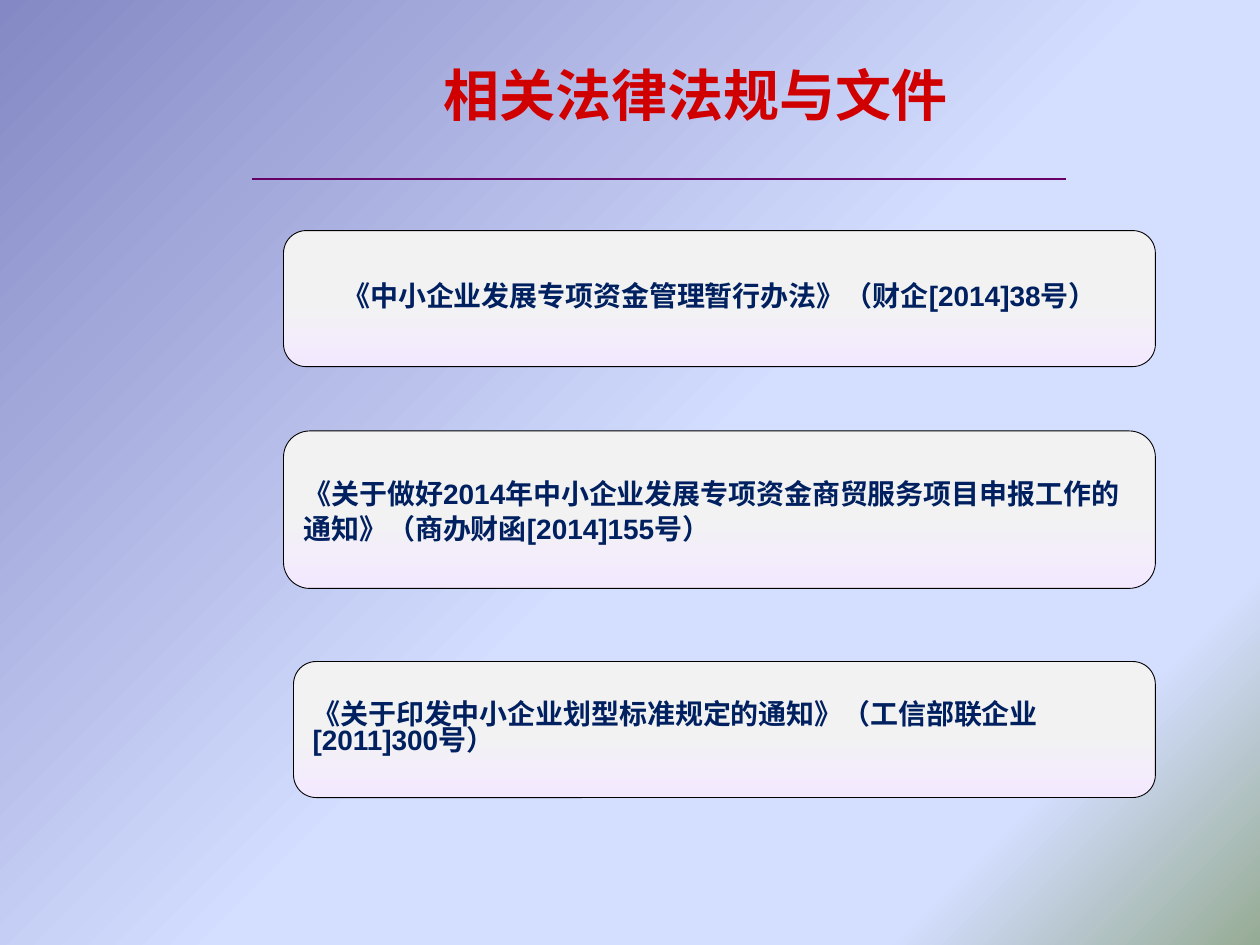
from lxml import etree
from pptx import Presentation
from pptx.dml.color import RGBColor
from pptx.enum import shapes, text
from pptx.oxml.ns import qn
from pptx.util import Inches, Pt

COLORS = {
    "title": "D00000", "body": "002060", "rule": "660066", "outline": "000000",
    "dusk": "8488C4", "sky": "D4DEFF", "sage": "96AB94",
    "grey": "F2F2F2", "lilac": "F3E9FF",
}
BACKGROUND_STOPS = [(0, "dusk"), (53, "sky"), (83, "sky"), (100, "sage")]
BOX_STOPS = [(0, "grey"), (50, "grey"), (100, "lilac")]
BOX_RIGHT = 9.17


def color(name):
    return RGBColor.from_string(COLORS[name])


def set_gradient(fill, element, stops, angle):
    """Give fill, found inside element, any number of stops; angle is clockwise."""
    fill.gradient()
    fill.gradient_angle = 360 - angle
    stop_list = element.find(".//" + qn("a:gsLst"))
    for stop in list(stop_list):
        stop_list.remove(stop)
    for percent, name in stops:
        stop = etree.SubElement(stop_list, qn("a:gs"), pos=str(percent * 1000))
        etree.SubElement(stop, qn("a:srgbClr"), val=COLORS[name])


def write_text(shape, content, *, font, size, color_name,
               align=text.PP_ALIGN.LEFT, line_spacing=None):
    frame = shape.text_frame
    frame.word_wrap = True
    frame.auto_size = text.MSO_AUTO_SIZE.NONE
    frame.vertical_anchor = text.MSO_ANCHOR.MIDDLE
    paragraph = frame.paragraphs[0]
    paragraph.alignment = align
    paragraph.line_spacing = line_spacing
    run = paragraph.add_run()
    run.text = content
    run.font.name = font
    run.font.size = Pt(size)
    run.font.bold = True
    run.font.color.rgb = color(color_name)


def add_title(slide, content):
    title = slide.shapes.title
    title.left, title.top = Inches(3.42), Inches(0.25)
    title.width, title.height = Inches(4.67), Inches(0.99)
    write_text(title, content, font="Calibri", size=32, color_name="title")


def add_rule(slide):
    rule = slide.shapes.add_connector(
        shapes.MSO_CONNECTOR.STRAIGHT,
        Inches(2), Inches(1.42), Inches(8.46), Inches(1.42))
    rule.line.color.rgb = color("rule")
    rule.line.width = Pt(0.75)
    etree.SubElement(rule._element.spPr, qn("a:effectLst"))


def add_document_box(slide, content, left, top, height, **text_format):
    box = slide.shapes.add_shape(
        shapes.MSO_SHAPE.ROUNDED_RECTANGLE, Inches(left), Inches(top),
        Inches(BOX_RIGHT - left), Inches(height))
    box.shadow.inherit = False
    set_gradient(box.fill, box._element, BOX_STOPS, 90)
    box.line.color.rgb = color("outline")
    box.line.width = Pt(0.5)
    write_text(box, content, font="Arial", size=16, color_name="body", **text_format)


def main():
    presentation = Presentation()
    presentation.slide_width, presentation.slide_height = Inches(10), Inches(7.5)
    slide = presentation.slides.add_slide(presentation.slide_layouts[5])
    set_gradient(slide.background.fill, slide._element, BACKGROUND_STOPS, 45)

    add_title(slide, "相关法律法规与文件")
    add_document_box(
        slide, "《关于印发中小企业划型标准规定的通知》（工信部联企业[2011]300号）",
        2.33, 5.25, 1.08, line_spacing=0.8)
    add_document_box(
        slide, "《关于做好2014年中小企业发展专项资金商贸服务项目申报工作的通知》"
        "（商办财函[2014]155号）",
        2.25, 3.42, 1.25, line_spacing=Pt(20))
    add_rule(slide)
    add_document_box(
        slide, "《中小企业发展专项资金管理暂行办法》（财企[2014]38号）",
        2.25, 1.83, 1.08, line_spacing=0.8, align=text.PP_ALIGN.CENTER)

    presentation.save("out.pptx")


if __name__ == "__main__":
    main()
